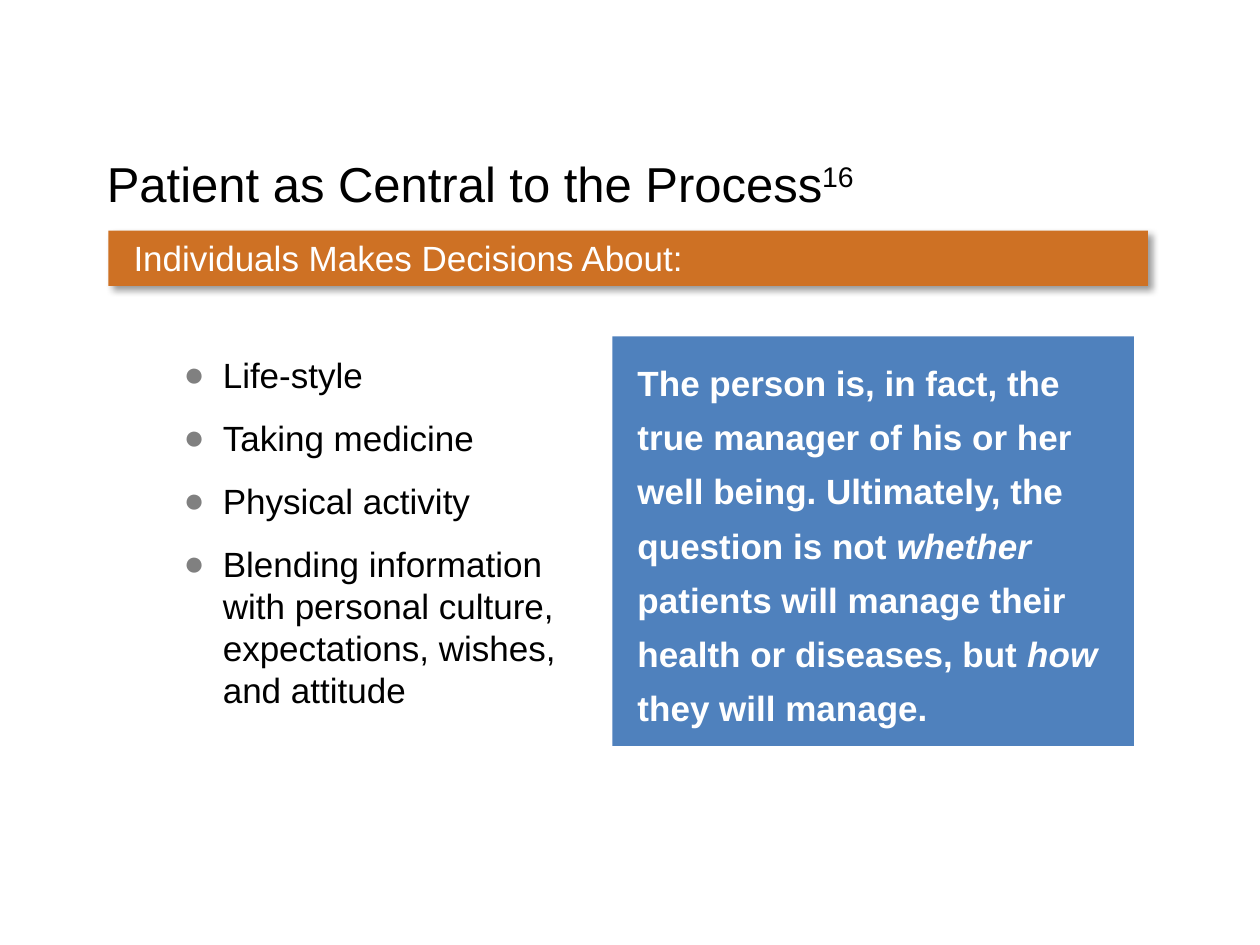
from lxml.etree import SubElement
from pptx import Presentation
from pptx.dml.color import RGBColor
from pptx.enum.shapes import MSO_SHAPE
from pptx.enum.text import MSO_ANCHOR, PP_ALIGN
from pptx.oxml.ns import qn
from pptx.util import Inches, Pt

COLORS = {
    "background": "FFFFFF",
    "text": "000000",
    "light": "FFFFFF",
    "bullet": "808080",
    "quote": "4F81BD",
    "banner": "CE7124",
    "shadow": "000000",
}
FONT = "Arial"

TITLE = [[("Patient as Central to the Process", ""), ("16", "superscript")]]
BANNER = [[("Individuals Makes Decisions About:", "")]]
DECISIONS = [
    [("Life-style", "")],
    [("Taking medicine", "")],
    [("Physical activity", "")],
    [("Blending information with personal culture, expectations, wishes, and attitude", "")],
]
QUOTE = [[
    ("The person is, in fact, the true manager of his or her well being. "
     "Ultimately, the question is not ", ""),
    ("whether", "italic"),
    (" patients will manage their health or diseases, but ", ""),
    ("how", "italic"),
    (" they will manage.", ""),
]]


def rgb(name):
    return RGBColor.from_string(COLORS[name])


def add_bullet(paragraph):
    properties = paragraph._p.get_or_add_pPr()
    properties.set("marL", str(Inches(0.81)))
    properties.set("indent", str(Inches(-0.31)))
    color = SubElement(properties, qn("a:buClr"))
    SubElement(color, qn("a:srgbClr"), val=COLORS["bullet"])
    SubElement(properties, qn("a:buFont"), typeface=FONT)
    SubElement(properties, qn("a:buChar"), char="●")


def write_text(shape, paragraphs, size=20, color="text", bold=False, insets=(0.1, 0.05),
               bullets=False, gap=0, line_spacing=None, space_after=None):
    frame = shape.text_frame
    frame.word_wrap = True
    frame.vertical_anchor = MSO_ANCHOR.TOP
    left, vertical = insets
    frame.margin_left, frame.margin_right = Inches(left), Inches(0.1)
    frame.margin_top = frame.margin_bottom = Inches(vertical)
    for index, runs in enumerate(paragraphs):
        paragraph = frame.add_paragraph() if index else frame.paragraphs[0]
        paragraph.alignment = PP_ALIGN.LEFT
        if bullets:
            add_bullet(paragraph)
        if index and gap:
            paragraph.space_before = Pt(gap)
        if line_spacing:
            paragraph.line_spacing = Pt(line_spacing)
        if space_after:
            paragraph.space_after = Pt(space_after)
        for text, style in runs:
            run = paragraph.add_run()
            run.text = text
            run.font.name = FONT
            run.font.size = Pt(size)
            run.font.bold = bold
            run.font.italic = style == "italic"
            run.font.color.rgb = rgb(color)
            if style == "superscript":
                run._r.get_or_add_rPr().set("baseline", "30000")


def add_text_box(slide, box, paragraphs, **text_format):
    shape = slide.shapes.add_textbox(*map(Inches, box))
    write_text(shape, paragraphs, **text_format)


def add_panel(slide, box, fill, paragraphs, **text_format):
    shape = slide.shapes.add_shape(MSO_SHAPE.RECTANGLE, *map(Inches, box))
    shape.shadow.inherit = False
    shape.fill.solid()
    shape.fill.fore_color.rgb = rgb(fill)
    shape.line.fill.background()
    write_text(shape, paragraphs, color="light", **text_format)
    return shape


def add_shadow(shape):
    effects = shape._element.spPr.find(qn("a:effectLst"))
    shadow = SubElement(effects, qn("a:outerShdw"), blurRad=str(Pt(4)), dist=str(Pt(3)),
                        dir=str(45 * 60000), algn="tl", rotWithShape="0")
    color = SubElement(shadow, qn("a:srgbClr"), val=COLORS["shadow"])
    SubElement(color, qn("a:alpha"), val="40000")


def main():
    presentation = Presentation()
    presentation.slide_width, presentation.slide_height = Inches(10), Inches(7.5)
    slide = presentation.slides.add_slide(presentation.slide_layouts[6])
    slide.background.fill.solid()
    slide.background.fill.fore_color.rgb = rgb("background")

    add_text_box(slide, (0.86, 2.76, 3.75, 2.96), DECISIONS, bullets=True, gap=12)
    add_text_box(slide, (0.75, 1.17, 8.75, 0.92), TITLE, size=28)
    add_panel(slide, (4.86, 2.67, 4.14, 3.25), "quote", QUOTE, bold=True,
              insets=(0.2, 0.1), line_spacing=31, space_after=18)
    banner = add_panel(slide, (0.86, 1.83, 8.25, 0.44), "banner", BANNER, insets=(0.2, 0.05))
    add_shadow(banner)

    presentation.save("out.pptx")


if __name__ == "__main__":
    main()
